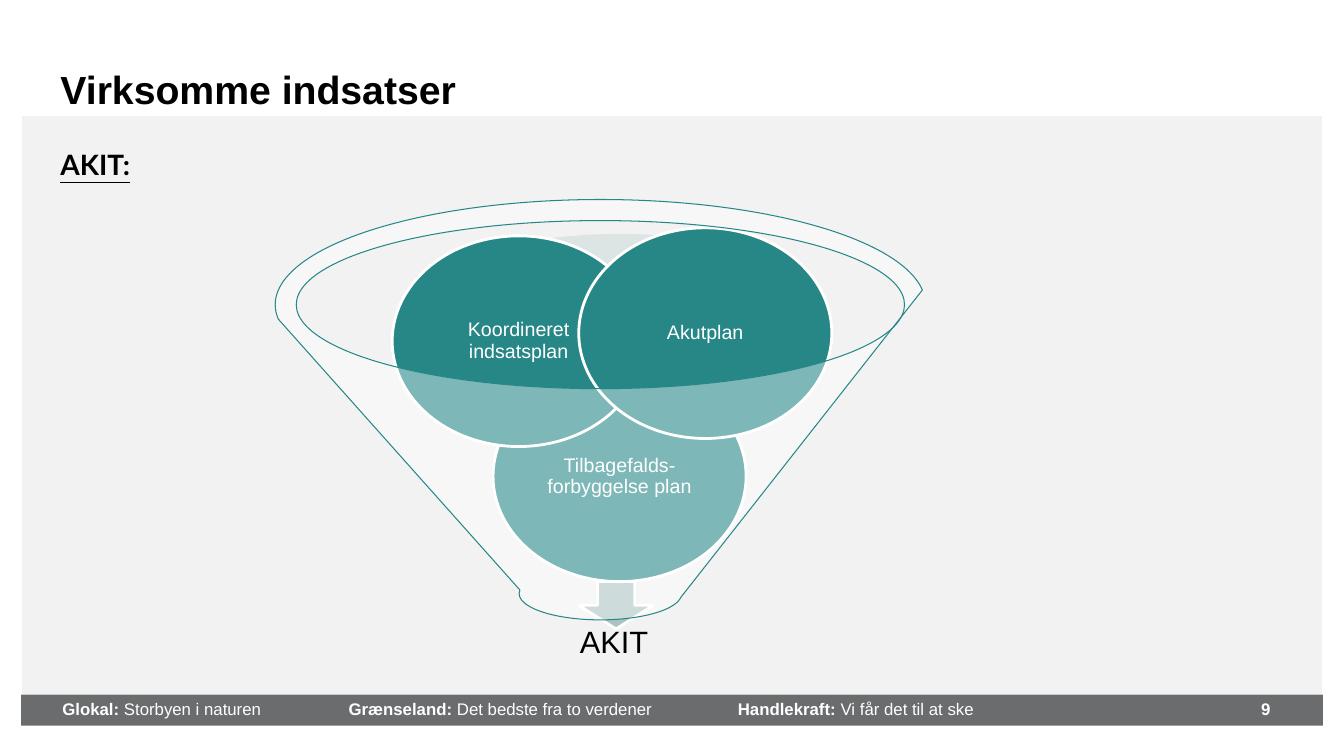
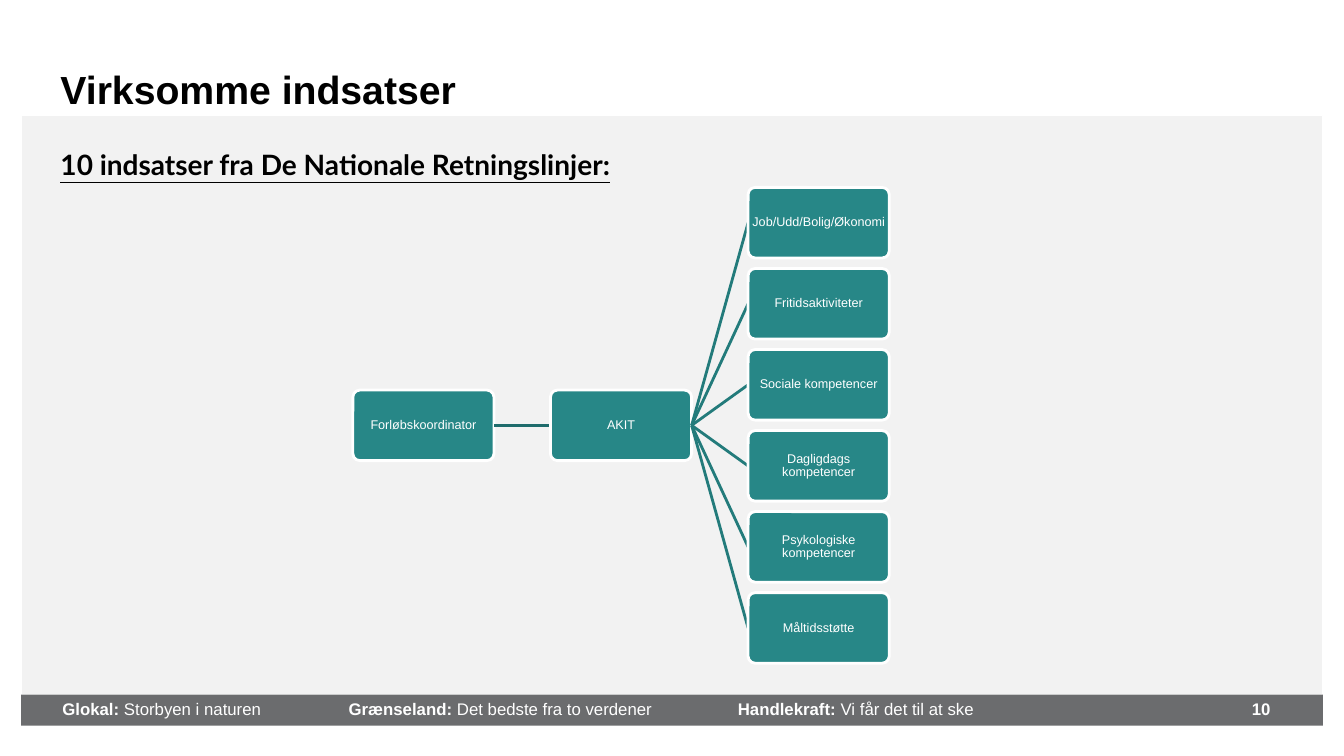
import lxml.etree
import pptx
import pptx.dml.color
import pptx.enum.shapes
import pptx.enum.text
import pptx.oxml.ns
import pptx.util

SHAPE = pptx.enum.shapes.MSO_SHAPE
ALIGN = pptx.enum.text.PP_ALIGN
ANCHOR = pptx.enum.text.MSO_ANCHOR
TEAL, TRUNK, BRANCH = "278787", "1F6C6C", "237B7B"
MIST, SAGE, PANEL, BAND = "BECFCF", "ADC3C3", "F2F2F2", "6B6C6E"
WHITE, BLACK = "FFFFFF", "000000"
SLIDE_SIZE = (13.33, 7.5)
PANEL_BOX = (0.21, 1.15, 12.91, 5.74)
BAND_BOX = (0.21, 6.89, 12.91, 0.31)
BAND_INSETS = (0.1, 0.05, 0.1, 0.05)
SLOGANS = [
    ("Glokal: ", "Storbyen i naturen", 0.52, 2.2),
    ("Grænseland: ", "Det bedste fra to verdener", 3.36, 3.46),
    ("Handlekraft: ", "Vi får det til at ske", 7.22, 2.61),
]


def rgb(value):
    """Turn a hex string into a colour."""
    return pptx.dml.color.RGBColor.from_string(value)


def inches(box):
    """Convert a box of inches to lengths."""
    return [pptx.util.Inches(length) for length in box]


def within(box, left, top, width, height):
    """Resolve percentages of a box to inches."""
    x, y, w, h = box
    return (x + w * left / 100, y + h * top / 100, w * width / 100, h * height / 100)


def write(holder, text, size=12, color=WHITE, font="Arial", bold=False, underline=None,
          align=ALIGN.LEFT, anchor=ANCHOR.TOP, insets=(0, 0, 0, 0), spacing=1.0):
    """Write text, or a list of (text, bold) runs, as one formatted paragraph."""
    frame = holder.text_frame
    frame.word_wrap = True
    frame.auto_size = pptx.enum.text.MSO_AUTO_SIZE.NONE
    frame.vertical_anchor = anchor
    (frame.margin_left, frame.margin_top,
     frame.margin_right, frame.margin_bottom) = inches(insets)
    paragraph = frame.paragraphs[0]
    paragraph.alignment = align
    paragraph.line_spacing = spacing
    paragraph.space_before = pptx.util.Pt(0)
    for words, heavy in [(text, bold)] if isinstance(text, str) else text:
        run = paragraph.add_run()
        run.text = words
        run.font.size = pptx.util.Pt(size)
        run.font.name = font
        run.font.bold = heavy
        run.font.underline = underline
        run.font.color.rgb = rgb(color)
    return paragraph


def label(slide, box, text, **style):
    """Add a text box."""
    caption = slide.shapes.add_textbox(*inches(box))
    write(caption, text, **style)
    return caption


def draw(slide, kind, box, fill, line=None, width=2, opacity=None):
    """Add a flat preset shape."""
    figure = slide.shapes.add_shape(kind, *inches(box))
    figure.shadow.inherit = False
    figure.fill.solid()
    figure.fill.fore_color.rgb = rgb(fill)
    if opacity:
        shade = next(figure.element.spPr.iter(pptx.oxml.ns.qn("a:srgbClr")))
        lxml.etree.SubElement(shade, pptx.oxml.ns.qn("a:alpha"), val=str(opacity * 1000))
    if line:
        figure.line.color.rgb = rgb(line)
        figure.line.width = pptx.util.Pt(width)
    else:
        figure.line.fill.background()
    return figure


def furnish_layout(layout, slide):
    """Draw the panel, the band and its slogans, and hand them to the layout."""
    parts = [
        draw(slide, SHAPE.RECTANGLE, PANEL_BOX, PANEL, WHITE, 0.75),
        draw(slide, SHAPE.RECTANGLE, BAND_BOX, BAND),
    ]
    for lead, words, left, width in SLOGANS:
        parts.append(label(slide, (left, 6.88, width, 0.3),
                           [(lead, True), (words, False)], insets=BAND_INSETS))
    for part in parts:
        layout.shapes.element.append(part.element)


def place(holder, box):
    """Move a placeholder to a box."""
    holder.left, holder.top, holder.width, holder.height = inches(box)


def head(slide, topic, number):
    """Fill the title and body placeholders and the page number."""
    title, theme = slide.shapes.title, slide.placeholders[1]
    place(title, (0.6, 1.39, 12.21, 0.47))
    write(title, topic, size=20, color=BLACK, font="Lato", bold=True, underline=True,
          anchor=ANCHOR.MIDDLE, insets=(0, 0.05, 0.1, 0.05))
    place(theme, (0.6, 0.6, 5.28, 0.47))
    heading = write(theme, "Virksomme indsatser", size=28, color=BLACK, bold=True,
                    insets=(0, 0.05, 0, 0.05))
    properties = heading._p.get_or_add_pPr()
    properties.set("marL", "0")
    properties.set("indent", "0")
    lxml.etree.SubElement(properties, pptx.oxml.ns.qn("a:buNone"))
    label(slide, (11.68, 6.88, 1.02, 0.3), str(number), bold=True,
          align=ALIGN.RIGHT, insets=BAND_INSETS)


def funnel(slide, box, plans, outcome):
    """Draw plans falling through a funnel into an outcome."""
    centred = {"align": ALIGN.CENTER, "anchor": ANCHOR.MIDDLE, "spacing": 0.9}
    draw(slide, SHAPE.OVAL, within(box, 23.41, 7.19, 59.07, 27.91), MIST, opacity=40)
    draw(slide, SHAPE.DOWN_ARROW, within(box, 46.67, 80.13, 11.47, 9.94), SAGE, WHITE)
    label(slide, within(box, 24.65, 86.05, 54.88, 13.95), outcome,
          size=22, color=BLACK, **centred)
    for plan, left, top in plans:
        ball = draw(slide, SHAPE.OVAL, within(box, left, top, 38.91, 44.19), TEAL, WHITE)
        write(ball, plan, size=14, insets=[0.02] * 4, **centred)
    draw(slide, SHAPE.FUNNEL, within(box, 0, 0, 100, 88.16), WHITE, TEAL, 0.75, opacity=40)


def node(slide, box, text):
    """Draw one rounded box of the tree."""
    tile = draw(slide, SHAPE.ROUNDED_RECTANGLE, box, TEAL, WHITE)
    tile.adjustments[0] = 0.1
    write(tile, text, size=9, align=ALIGN.CENTER, anchor=ANCHOR.MIDDLE,
          insets=[0.01] * 4, spacing=0.9)
    return tile


def link(slide, parent, child, color):
    """Join the right of a parent to the left of a child, behind the child."""
    branch = slide.shapes.add_connector(pptx.enum.shapes.MSO_CONNECTOR.STRAIGHT, 0, 0, 0, 0)
    branch.begin_connect(parent, 3)
    branch.end_connect(child, 1)
    branch.line.color.rgb = rgb(color)
    branch.line.width = pptx.util.Pt(2)
    lxml.etree.SubElement(branch.element.spPr, pptx.oxml.ns.qn("a:effectLst"))
    branch.element.addnext(child.element)


def tree(slide, box, root, hub, efforts):
    """Draw a root, a hub and a column of efforts from left to right."""
    left, top, width, height = box
    tile_width = width / 3.8
    tile_height = tile_width / 2
    column = tile_width * 1.4
    row = (height - tile_height) / (len(efforts) - 1)
    middle = top + (height - tile_height) / 2
    start = node(slide, (left, middle, tile_width, tile_height), root)
    centre = node(slide, (left + column, middle, tile_width, tile_height), hub)
    link(slide, start, centre, TRUNK)
    for index, effort in enumerate(efforts):
        leaf = node(slide, (left + 2 * column, top + index * row, tile_width, tile_height),
                    effort)
        link(slide, centre, leaf, BRANCH)


def main():
    """Build both slides and save them."""
    deck = pptx.Presentation()
    deck.slide_width, deck.slide_height = inches(SLIDE_SIZE)
    layout = deck.slide_layouts[1]

    plans_slide = deck.slides.add_slide(layout)
    furnish_layout(layout, plans_slide)
    head(plans_slide, "AKIT:", 9)
    funnel(plans_slide, (2.73, 1.98, 6.45, 4.73), [
        ("Tilbagefalds-forbyggelse plan", 33.49, 35.94),
        ("Koordineret indsatsplan", 17.98, 7.61),
        ("Akutplan", 46.67, 5.92),
    ], "AKIT")

    efforts_slide = deck.slides.add_slide(layout)
    head(efforts_slide, "10 indsatser fra De Nationale Retningslinjer:", 10)
    tree(efforts_slide, (3.5, 1.86, 5.32, 4.72), "Forløbskoordinator", "AKIT", [
        "Job/Udd/Bolig/Økonomi",
        "Fritidsaktiviteter",
        "Sociale kompetencer",
        "Dagligdags kompetencer",
        "Psykologiske kompetencer",
        "Måltidsstøtte",
    ])
    deck.save("out.pptx")


if __name__ == "__main__":
    main()
